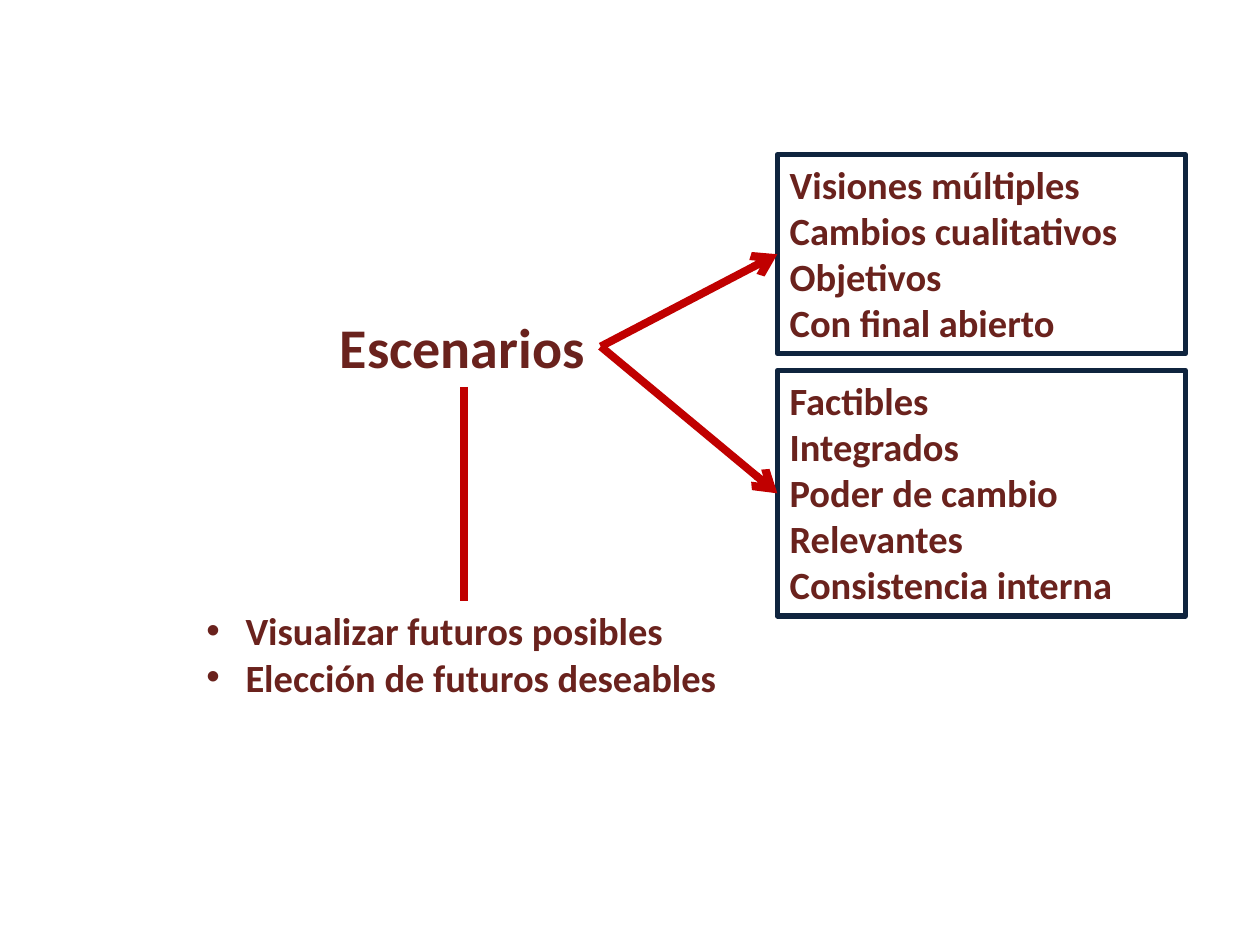
from dataclasses import dataclass

from lxml import etree
from pptx import Presentation
from pptx import util as u
from pptx.dml.color import RGBColor
from pptx.enum import shapes, text
from pptx.oxml.ns import qn

COLORS = {"text": "6A221D", "arrow": "C00000", "frame": "0F243E"}
FONT = "Calibri"


@dataclass
class Block:
    """A group of text lines; lengths in centimetres."""
    left: float
    top: float
    width: float
    height: float
    lines: list[str]

    @property
    def middle(self) -> float:
        return self.top + self.height / 2

    @property
    def bottom(self) -> float:
        return self.top + self.height

    @property
    def right(self) -> float:
        return self.left + self.width

    def frame(self) -> list[u.Length]:
        return [u.Cm(v) for v in (self.left, self.top, self.width, self.height)]


def color(name: str) -> RGBColor:
    return RGBColor.from_string(COLORS[name])


def write(frame, lines: list[str], *, size: float = 22, wrap: bool = False,
          bullet: bool = False) -> None:
    frame.word_wrap = wrap
    frame.vertical_anchor = text.MSO_ANCHOR.TOP
    for i, line in enumerate(lines):
        paragraph = frame.paragraphs[0] if i == 0 else frame.add_paragraph()
        paragraph.alignment = text.PP_ALIGN.LEFT
        if bullet:
            props = paragraph._p.get_or_add_pPr()
            indent = u.Cm(0.79)
            props.set("marL", str(indent))
            props.set("indent", str(-indent))
            etree.SubElement(props, qn("a:buFont")).set("typeface", "Arial")
            etree.SubElement(props, qn("a:buChar")).set("char", "•")
        run = paragraph.add_run()
        run.text = line
        run.font.name = FONT
        run.font.size = u.Pt(size)
        run.font.bold = True
        run.font.color.rgb = color("text")


def add_label(slide, block: Block, **text_format) -> None:
    box = slide.shapes.add_textbox(*block.frame())
    write(box.text_frame, block.lines, **text_format)


def add_framed(slide, block: Block) -> None:
    box = slide.shapes.add_shape(shapes.MSO_SHAPE.RECTANGLE, *block.frame())
    box.shadow.inherit = False
    box.fill.background()
    box.line.color.rgb = color("frame")
    box.line.width = u.Pt(3)
    write(box.text_frame, block.lines, wrap=True)


def add_link(slide, start: tuple[float, float], end: tuple[float, float],
             arrow: bool = False) -> None:
    link = slide.shapes.add_connector(
        shapes.MSO_CONNECTOR.STRAIGHT, *(u.Cm(v) for v in start + end))
    link.line.color.rgb = color("arrow")
    link.line.width = u.Pt(4.5)
    props = link._element.spPr
    if arrow:
        etree.SubElement(props.find(qn("a:ln")), qn("a:tailEnd")).set("type", "arrow")
    etree.SubElement(props, qn("a:effectLst"))


# Content
scenarios = Block(6.6, 6.17, 5.51, 1.63, ["Escenarios"])
purposes = Block(3.91, 12.12, 10.92, 2.13,
                 ["Visualizar futuros posibles", "Elección de futuros deseables"])
traits = [
    Block(15.67, 3.12, 8.23, 4.01,
          ["Visiones múltiples", "Cambios cualitativos", "Objetivos",
           "Con final abierto"]),
    Block(15.67, 7.47, 8.23, 4.95,
          ["Factibles", "Integrados", "Poder de cambio", "Relevantes",
           "Consistencia interna"]),
]


def main() -> None:
    deck = Presentation()
    deck.slide_width, deck.slide_height = u.Cm(25.4), u.Cm(19.05)
    slide = deck.slides.add_slide(deck.slide_layouts[6])

    # Central concept and its purposes
    add_label(slide, purposes, bullet=True)
    add_label(slide, scenarios, size=32)
    center = scenarios.left + scenarios.width / 2
    add_link(slide, (center, scenarios.bottom), (center, purposes.top))

    # Traits, each reached by an arrow
    for block in traits:
        add_framed(slide, block)
        add_link(slide, (scenarios.right, scenarios.middle),
                 (block.left, block.middle), arrow=True)

    deck.save("out.pptx")


if __name__ == "__main__":
    main()
